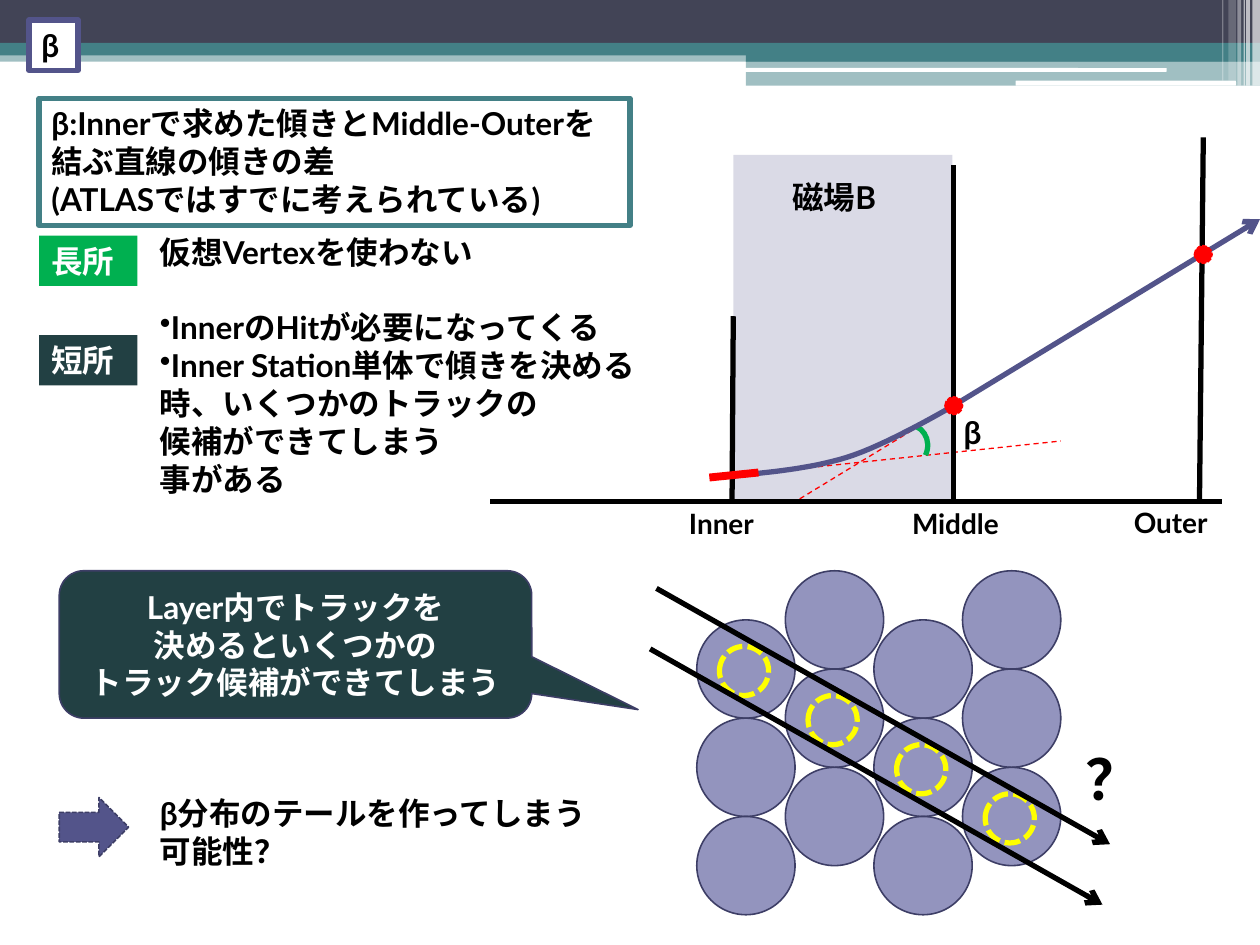
from lxml.etree import SubElement
from pptx import Presentation
from pptx.dml.color import RGBColor
from pptx.enum.dml import MSO_LINE as Dash
from pptx.enum.shapes import MSO_CONNECTOR, MSO_SHAPE as Shape
from pptx.enum.text import MSO_ANCHOR as Anchor, MSO_AUTO_SIZE as AutoSize, PP_ALIGN as Align
from pptx.oxml.ns import qn
from pptx.util import Inches, Pt

BLACK = RGBColor(0x00, 0x00, 0x00)
WHITE = RGBColor(0xFF, 0xFF, 0xFF)
SLATE = RGBColor(0x42, 0x44, 0x56)
TEAL = RGBColor(0x43, 0x80, 0x86)
DARK_TEAL = RGBColor(0x22, 0x40, 0x43)
INDIGO = RGBColor(0x53, 0x54, 0x8A)
DARK_INDIGO = RGBColor(0x3D, 0x3E, 0x66)
LAVENDER = RGBColor(0x93, 0x94, 0xBE)
GREEN = RGBColor(0x00, 0xB0, 0x50)
RED = RGBColor(0xFF, 0x00, 0x00)
YELLOW = RGBColor(0xFF, 0xFF, 0x00)

THIN = (DARK_INDIGO, 0.9)


class SlideArtist:
    def __init__(self, slide, font="Lato"):
        self.shapes = slide.shapes
        self.font = font

    def stroke(self, line, color, width, dash=None):
        line.color.rgb = color
        for name, value in {"width": Pt(width), "dash_style": dash}.items():
            setattr(line, name, value)

    def shape(self, kind, at, fill=None, line=None, opacity=100, rotation=0):
        shape = self.shapes.add_shape(kind, *map(Inches, at))
        shape.shadow.inherit = False
        shape.rotation = rotation
        if fill is None:
            shape.fill.background()
        else:
            shape.fill.solid()
            shape.fill.fore_color.rgb = fill
            if opacity < 100:
                color = shape.fill._xPr.find(".//" + qn("a:srgbClr"))
                SubElement(color, qn("a:alpha"), val=str(opacity * 1000))
        if line:
            self.stroke(shape.line, *line)
        else:
            shape.line.fill.background()
        return shape

    def fill_text(self, shape, paragraphs, size=18, color=BLACK, align=Align.LEFT,
                  anchor=Anchor.TOP, auto_size=AutoSize.SHAPE_TO_FIT_TEXT):
        """Fill a shape with paragraphs; a leading • becomes a real bullet."""
        frame = shape.text_frame
        frame_format = {"word_wrap": True, "vertical_anchor": anchor, "auto_size": auto_size}
        for name, value in frame_format.items():
            setattr(frame, name, value)
        font_format = {"name": self.font, "size": Pt(size), "bold": True}
        for index, words in enumerate(paragraphs):
            paragraph = frame.add_paragraph() if index else frame.paragraphs[0]
            paragraph.alignment = align
            run = paragraph.add_run()
            run.text = words.removeprefix("•")
            for name, value in font_format.items():
                setattr(run.font, name, value)
            run.font.color.rgb = color
            if words.startswith("•"):
                properties = paragraph._p.get_or_add_pPr()
                properties.set("marL", "0")
                properties.set("indent", "0")
                SubElement(properties, qn("a:buChar"), char="•")
        return frame

    def text(self, at, *paragraphs, **style):
        return self.fill_text(self.shapes.add_textbox(*map(Inches, at)), paragraphs, **style)

    def box(self, at, *paragraphs, fill=None, line=None, **style):
        return self.fill_text(self.shape(Shape.RECTANGLE, at, fill, line), paragraphs, **style)

    def line(self, start, end, color=BLACK, width=3, dash=None, arrow=False):
        line = self.shapes.add_connector(MSO_CONNECTOR.STRAIGHT, *map(Inches, start + end))
        self.stroke(line.line, color, width, dash)
        if arrow:
            SubElement(line.line._get_or_add_ln(), qn("a:tailEnd"), type="arrow")
        SubElement(line._element.spPr, qn("a:effectLst"))

    def curve(self, segments, line, steps=16):
        """Draw joined cubic Bézier segments as a fine open outline."""
        points = []
        for controls in segments:
            for step in range(1, steps + 1):
                t = step / steps
                weights = ((1 - t) ** 3, 3 * t * (1 - t) ** 2, 3 * t * t * (1 - t), t ** 3)
                points.append(tuple(Inches(sum(w * v for w, v in zip(weights, axis)))
                                    for axis in zip(*controls)))
        builder = self.shapes.build_freeform(*map(Inches, segments[0][0]))
        builder.add_line_segments(points, close=False)
        outline = builder.convert_to_shape()
        outline.shadow.inherit = False
        outline.fill.background()
        self.stroke(outline.line, *line)


def draw_banner(artist):
    for at, color, opacity in (
        ((0, 0.4, 10, 0.09), TEAL, 50),
        ((0, 0, 10, 0.34), SLATE, 100),
        ((0, 0.34, 10, 0.1), TEAL, 100),
        ((5.92, 0.39, 4.08, 0.1), TEAL, 100),
        ((5.92, 0.48, 4.08, 0.2), TEAL, 50),
    ):
        artist.shape(Shape.RECTANGLE, at, color, opacity=opacity)
    for at in ((5.91, 0.54, 3.35, 0.03), (8.06, 0.64, 1.75, 0.04)):
        artist.shape(Shape.ROUNDED_RECTANGLE, at, WHITE)
    for left, width, height, opacity in (
        (9.94, 0.06, 0.68, 65), (9.89, 0.03, 0.68, 65), (9.87, 0.01, 0.68, 60),
        (9.82, 0.03, 0.68, 40), (9.75, 0.06, 0.64, 20), (9.7, 0.01, 0.64, 30),
    ):
        artist.shape(Shape.RECTANGLE, (left, 0, width, height), WHITE, opacity=opacity)


def draw_explanation(artist):
    artist.box((0.23, 0.16, 0.39, 0.4), "β", fill=WHITE, line=(INDIGO, 3))
    artist.box((0.31, 0.78, 4.69, 1.01), "β:Innerで求めた傾きとMiddle-Outerを結ぶ直線の傾きの差",
               "(ATLASではすでに考えられている)", line=(TEAL, 3))
    artist.box((0.31, 1.87, 0.78, 0.4), "長所", fill=GREEN, color=WHITE)
    artist.box((0.31, 2.66, 0.78, 0.4), "短所", fill=DARK_TEAL, color=WHITE)
    points = artist.text((1.17, 1.8, 4.14, 2.22), "仮想Vertexを使わない",
                         "•InnerのHitが必要になってくる",
                         "•Inner Station単体で傾きを決める時、いくつかのトラックの",
                         "候補ができてしまう", "事がある")
    points.paragraphs[1].space_before = Pt(21.5)


def draw_track_diagram(artist):
    artist.shape(Shape.RECTANGLE, (5.82, 1.23, 1.74, 2.73), INDIGO, opacity=21)
    for start, end in (((9.38, 2.11), (6.33, 3.97)), ((5.78, 3.78), (8.42, 3.5))):
        artist.line(start, end, RED, 0.75, Dash.DASH)
    artist.text((5.37, 3.97, 1, 0.38), "Inner", size=16)
    artist.text((7.14, 3.97, 1.33, 0.38), "Middle", size=16)
    artist.text((8.9, 3.96, 1.07, 0.41), "Outer", size=16)
    artist.text((7.55, 3.23, 0.37, 0.45), "β")
    artist.shape(Shape.ARC, (7.04, 3.37, 0.32, 0.35), line=(GREEN, 3), rotation=24.9)
    baseline = 3.98
    artist.line((3.89, baseline), (9.7, baseline))
    for top_x, top, foot_x in ((5.82, 2.51, 5.81), (7.57, 1.31, 7.57), (9.55, 1.09, 9.52)):
        artist.line((top_x, top), (foot_x, baseline))
    artist.line((7.55, 3.23), (10, 1.74), INDIGO, arrow=True)
    artist.text((6.19, 1.36, 1.41, 0.35), "磁場B")
    artist.curve((((5.78, 3.78), (6.1, 3.75), (6.43, 3.72), (6.72, 3.63)),
                  ((6.72, 3.63), (7.02, 3.54), (7.55, 3.23), (7.55, 3.23))), (INDIGO, 3))


def draw_tubes(artist):
    pitch, diameter, hit = 0.703, 0.78, 0.39
    for column in range(4):
        top = 4.53 if column % 2 else 4.92
        for row in range(3):
            at = (5.53 + column * pitch, top + row * diameter, diameter, diameter)
            artist.shape(Shape.OVAL, at, LAVENDER, THIN)
    for layer in range(4):
        at = (5.71 + layer * pitch, 5.13 + layer * diameter / 2, hit, hit)
        artist.shape(Shape.OVAL, at, line=(YELLOW, 3, Dash.SQUARE_DOT))
    for start, end in (((5.21, 4.67), (8.81, 6.7)), ((5.16, 5.15), (8.75, 7.18))):
        artist.line(start, end, arrow=True)
    artist.text((8.52, 5.86, 0.94, 0.64), "？", size=32)


def draw_conclusion(artist):
    callout = artist.shape(Shape.ROUNDED_RECTANGULAR_CALLOUT, (0.47, 4.53, 3.75, 1.17),
                           DARK_TEAL, THIN)
    for index, value in enumerate((0.725, 0.442, 0.167)):
        callout.adjustments[index] = value
    artist.fill_text(callout, ("Layer内でトラックを", "決めるといくつかの", "トラック候補ができてしまう"),
                     color=WHITE, align=Align.CENTER, anchor=Anchor.MIDDLE,
                     auto_size=AutoSize.NONE)
    artist.shape(Shape.RIGHT_ARROW, (0.47, 6.33, 0.55, 0.47), INDIGO, THIN + (Dash.SQUARE_DOT,))
    artist.text((1.17, 6.25, 3.91, 0.71), "β分布のテールを作ってしまう", "可能性？")


def draw_hits(artist):
    artist.line((5.63, 3.79), (6.02, 3.75), RED, 4.5)
    for left, top in ((7.5, 3.15), (9.48, 1.95)):
        artist.shape(Shape.OVAL, (left, top, 0.14, 0.14), RED, (RED, 0.9, Dash.SQUARE_DOT))


def main():
    deck = Presentation()
    deck.slide_width, deck.slide_height = Inches(10), Inches(7.5)
    artist = SlideArtist(deck.slides.add_slide(deck.slide_layouts[6]))
    for draw in (draw_banner, draw_explanation, draw_track_diagram,
                 draw_tubes, draw_conclusion, draw_hits):
        draw(artist)
    deck.save("out.pptx")


if __name__ == "__main__":
    main()
